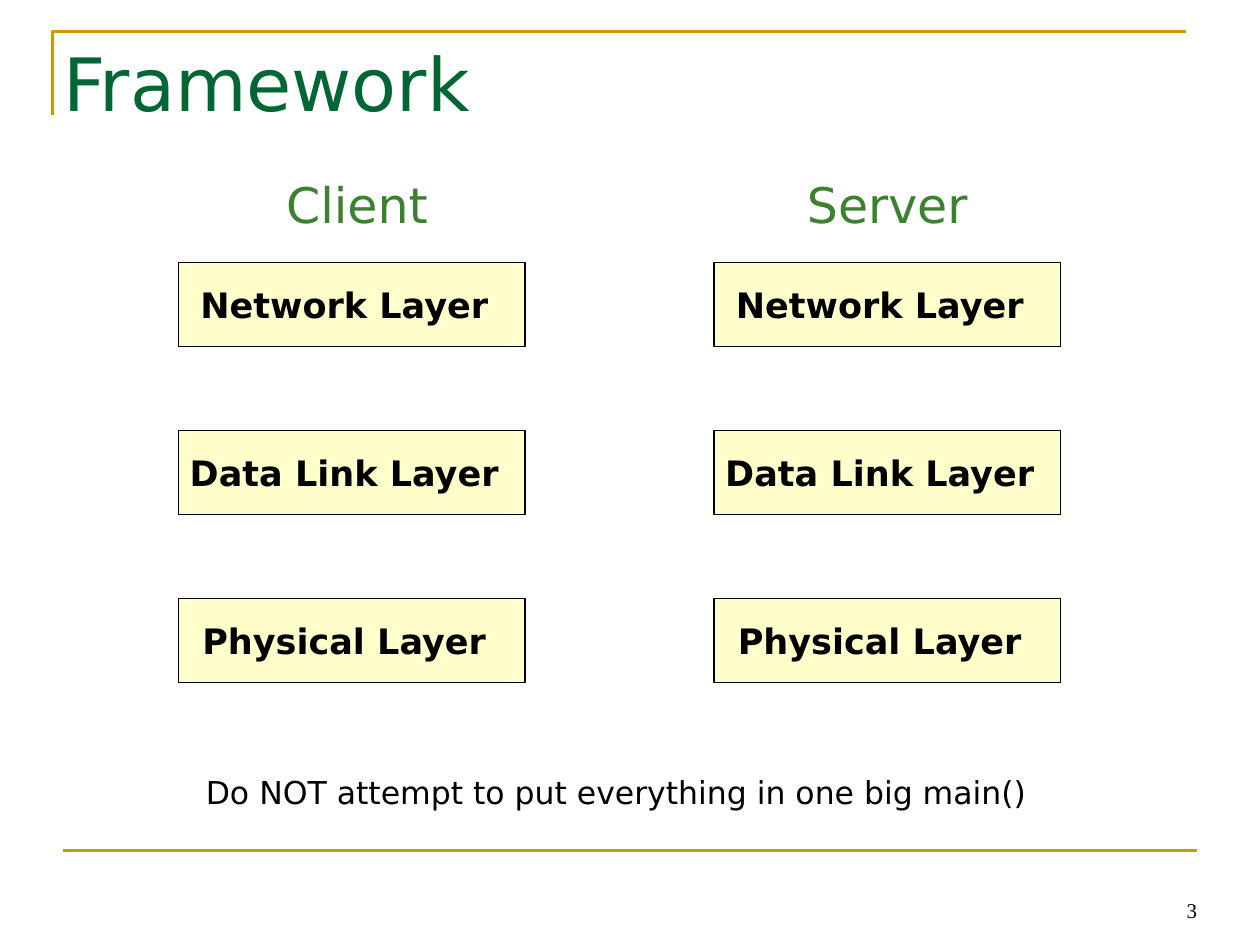
from lxml import etree
from pptx import Presentation
from pptx.dml.color import RGBColor
from pptx.enum import shapes, text
from pptx.oxml.ns import qn
from pptx.util import Pt

SANS, SERIF = "DejaVu Sans", "Times New Roman"
GOLD, BLACK = "CC9900", "000000"
LAYERS = [("Network Layer", 173.5), ("Data Link Layer", 183.5), ("Physical Layer", 170)]
COLUMNS = [("Client", 102, 138, 132), ("Server", 408, 438, 138)]
BOX_TOP, BOX_WIDTH, BOX_HEIGHT, BOX_PITCH = 150, 198, 48, 96
LABEL_HEIGHT, LABEL_SHIFT = 31, 4.25


def color(value):
    return RGBColor.from_string(value)


def set_all(target, values):
    for name, value in values.items():
        setattr(target, name, value)


def write(shape, words, size, ink, font=SANS, bold=False, inset=0,
          paragraph_format=None, **frame_format):
    """Put one formatted paragraph into a shape, with the same inset on all sides."""
    frame = shape.text_frame
    sides = ("margin_left", "margin_top", "margin_right", "margin_bottom")
    set_all(frame, dict.fromkeys(sides, Pt(inset)))
    set_all(frame, {"word_wrap": True, "auto_size": text.MSO_AUTO_SIZE.SHAPE_TO_FIT_TEXT,
                    "vertical_anchor": text.MSO_ANCHOR.TOP, **frame_format})
    paragraph = frame.paragraphs[0]
    set_all(paragraph, {"alignment": text.PP_ALIGN.LEFT, **(paragraph_format or {})})
    run = paragraph.add_run()
    run.text = words
    set_all(run.font, {"name": font, "size": Pt(size), "bold": bold})
    run.font.color.rgb = color(ink)


def add_text(parent, left, top, width, height, *content, **formats):
    box = parent.add_textbox(Pt(left), Pt(top), Pt(width), Pt(height))
    write(box, *content, **formats)


def set_line(shape, ink, width):
    shape.line.color.rgb = color(ink)
    shape.line.width = Pt(width)


def add_frame_lines(slide):
    builder = slide.shapes.build_freeform(Pt(30), Pt(66))
    builder.add_line_segments([(Pt(30), Pt(18)), (Pt(678), Pt(18))], close=False)
    corner = builder.convert_to_shape()
    corner.shadow.inherit = False
    corner.fill.background()
    set_line(corner, GOLD, 1.5)

    rule = slide.shapes.add_connector(shapes.MSO_CONNECTOR.STRAIGHT,
                                      Pt(36), Pt(486), Pt(684), Pt(486))
    set_line(rule, GOLD, 1.5)
    etree.SubElement(rule._element.spPr, qn("a:effectLst"))


def add_title(slide, words):
    title = slide.shapes.title
    set_all(title, {"left": Pt(36), "top": Pt(21.5), "width": Pt(648), "height": Pt(90)})
    write(title, words, 42, "006633", auto_size=text.MSO_AUTO_SIZE.NONE)


def add_layer(slide, left, top, words, label_width):
    """Group a layer's rectangle with its label, set slightly left of centre."""
    group = slide.shapes.add_group_shape()
    box = group.shapes.add_shape(shapes.MSO_SHAPE.RECTANGLE,
                                 Pt(left), Pt(top), Pt(BOX_WIDTH), Pt(BOX_HEIGHT))
    box.shadow.inherit = False
    box.fill.solid()
    box.fill.fore_color.rgb = color("FFFFCC")
    set_line(box, BLACK, 0.75)
    add_text(group.shapes, left + (BOX_WIDTH - label_width) / 2 - LABEL_SHIFT,
             top + (BOX_HEIGHT - LABEL_HEIGHT) / 2, label_width, LABEL_HEIGHT,
             words, 20, BLACK, bold=True, word_wrap=False,
             vertical_anchor=text.MSO_ANCHOR.MIDDLE,
             paragraph_format={"alignment": text.PP_ALIGN.CENTER})


def main():
    presentation = Presentation()
    set_all(presentation, {"slide_width": Pt(720), "slide_height": Pt(540)})
    slide = presentation.slides.add_slide(presentation.slide_layouts[5])

    # Frame, page number and title
    add_frame_lines(slide)
    add_text(slide.shapes, 516, 506.4, 168, 21, "3", 12, BLACK, font=SERIF,
             vertical_anchor=text.MSO_ANCHOR.BOTTOM,
             paragraph_format={"alignment": text.PP_ALIGN.RIGHT})
    add_title(slide, "Framework")

    # One stack of layers under each heading
    for heading, left, heading_left, heading_width in COLUMNS:
        for row, (words, label_width) in enumerate(LAYERS):
            add_layer(slide, left, BOX_TOP + row * BOX_PITCH, words, label_width)
        add_text(slide.shapes, heading_left, 96, heading_width, 41, heading, 28, "3B812F",
                 inset=3.6,
                 paragraph_format={"alignment": text.PP_ALIGN.CENTER, "space_before": Pt(16)})

    # Advice below the stacks
    add_text(slide.shapes, 114, 438, 482, 29.5,
             "Do NOT attempt to put everything in one big main()", 18, BLACK,
             inset=3.6, word_wrap=False)

    presentation.save("out.pptx")


if __name__ == "__main__":
    main()
